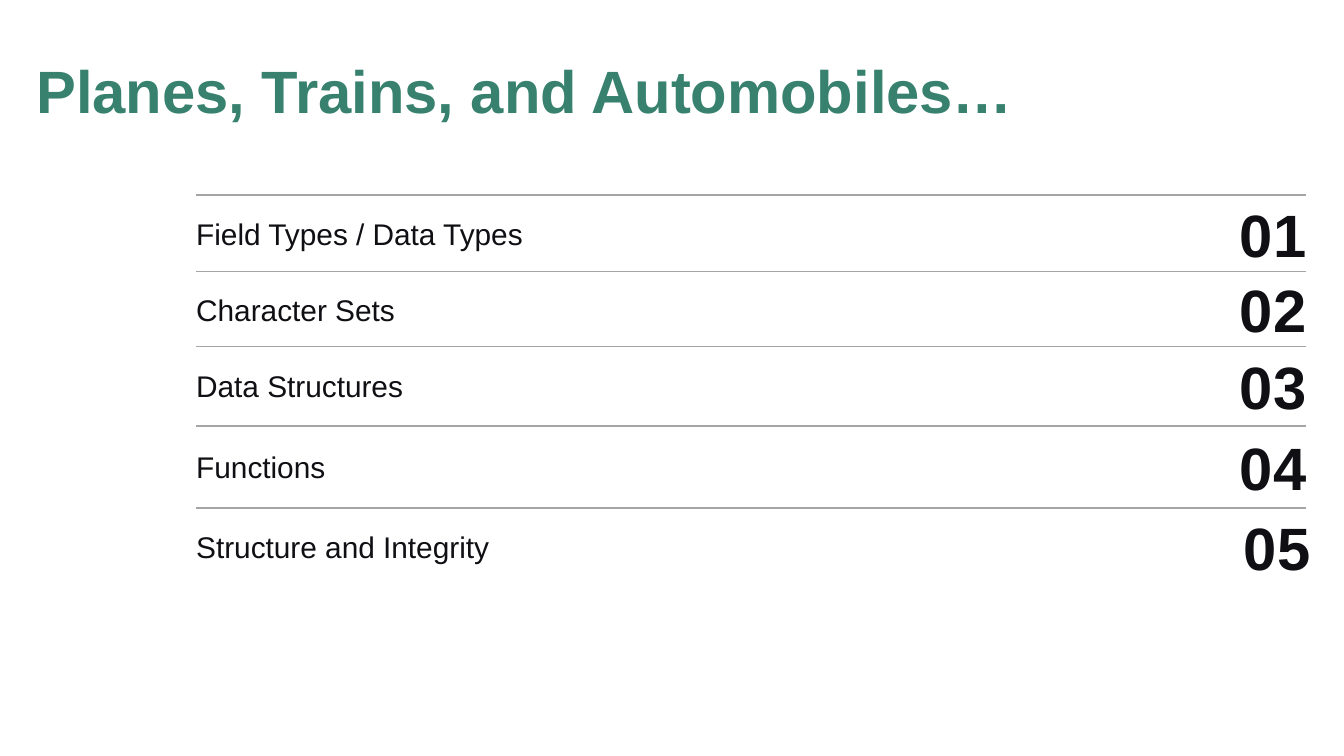
from lxml import etree
from pptx import Presentation
from pptx.dml.color import RGBColor
from pptx.enum.shapes import MSO_CONNECTOR
from pptx.enum.text import MSO_ANCHOR, MSO_AUTO_SIZE, PP_ALIGN
from pptx.oxml.ns import qn
from pptx.util import Inches, Pt

LINE = MSO_CONNECTOR.STRAIGHT
TOP, MIDDLE = MSO_ANCHOR.TOP, MSO_ANCHOR.MIDDLE
LEFT, RIGHT = PP_ALIGN.LEFT, PP_ALIGN.RIGHT
FIXED = MSO_AUTO_SIZE.NONE

COLORS = {"title": "37816E", "text": "0F0F14", "rule": "A5A5A5"}


def write(shape, text, size, color, bold, align, anchor, insets):
    """Set the text; insets are left, top, right, bottom in inches."""
    frame = shape.text_frame
    frame.text = text
    frame.word_wrap = True
    frame.auto_size = FIXED
    frame.vertical_anchor = anchor
    (frame.margin_left, frame.margin_top,
     frame.margin_right, frame.margin_bottom) = map(Inches, insets)
    para = frame.paragraphs[0]
    para.alignment = align
    font = para.runs[0].font
    font.name, font.size, font.bold = "Arial", Pt(size), bold
    font.color.rgb = RGBColor.from_string(COLORS[color])


prs = Presentation()
prs.slide_width = Inches(10)
prs.slide_height = Inches(10 * 9 / 16)
slide = prs.slides.add_slide(prs.slide_layouts[5])
shapes = slide.shapes

title = shapes.title
title.left, title.top = Inches(0.27), Inches(0.46)
title.width, title.height = Inches(7.99), Inches(0.67)
write(title, "Planes, Trains, and Automobiles…", 32, "title", True, LEFT, TOP,
      (0, 0, 0, 0))
title.text_frame.paragraphs[0].line_spacing = 0.9

# Topic, rule above it, top and height of its row, left edge of its number
rows = [
    ("Field Types / Data Types", 1.45, 1.45, 0.58, 8.43),
    ("Character Sets", 2.02, 2.02, 0.56, 8.43),
    ("Data Structures", 2.58, 2.58, 0.58, 8.43),
    ("Functions", 3.17, 3.18, 0.59, 8.43),
    ("Structure and Integrity", 3.78, 3.78, 0.58, 8.46),
]
for number, (topic, edge, top, height, left) in enumerate(rows, 1):
    y, high = Inches(top), Inches(height)
    label = shapes.add_textbox(Inches(1.46), y, Inches(7.09), high)
    write(label, topic, 16, "text", False, LEFT, MIDDLE, (0, 0.1, 0.1, 0.1))
    count = shapes.add_textbox(Inches(left), y, Inches(1.29), high)
    write(count, f"{number:02}", 32, "text", True, RIGHT, MIDDLE,
          (0.1, 0.1, 0, 0.1))

    rule = shapes.add_connector(LINE, Inches(9.72), Inches(edge),
                                Inches(1.46), Inches(edge))
    rule.line.color.rgb = RGBColor.from_string(COLORS["rule"])
    rule.line.width = Pt(0.75)
    etree.SubElement(rule._element.spPr, qn("a:effectLst"))

prs.save("out.pptx")
